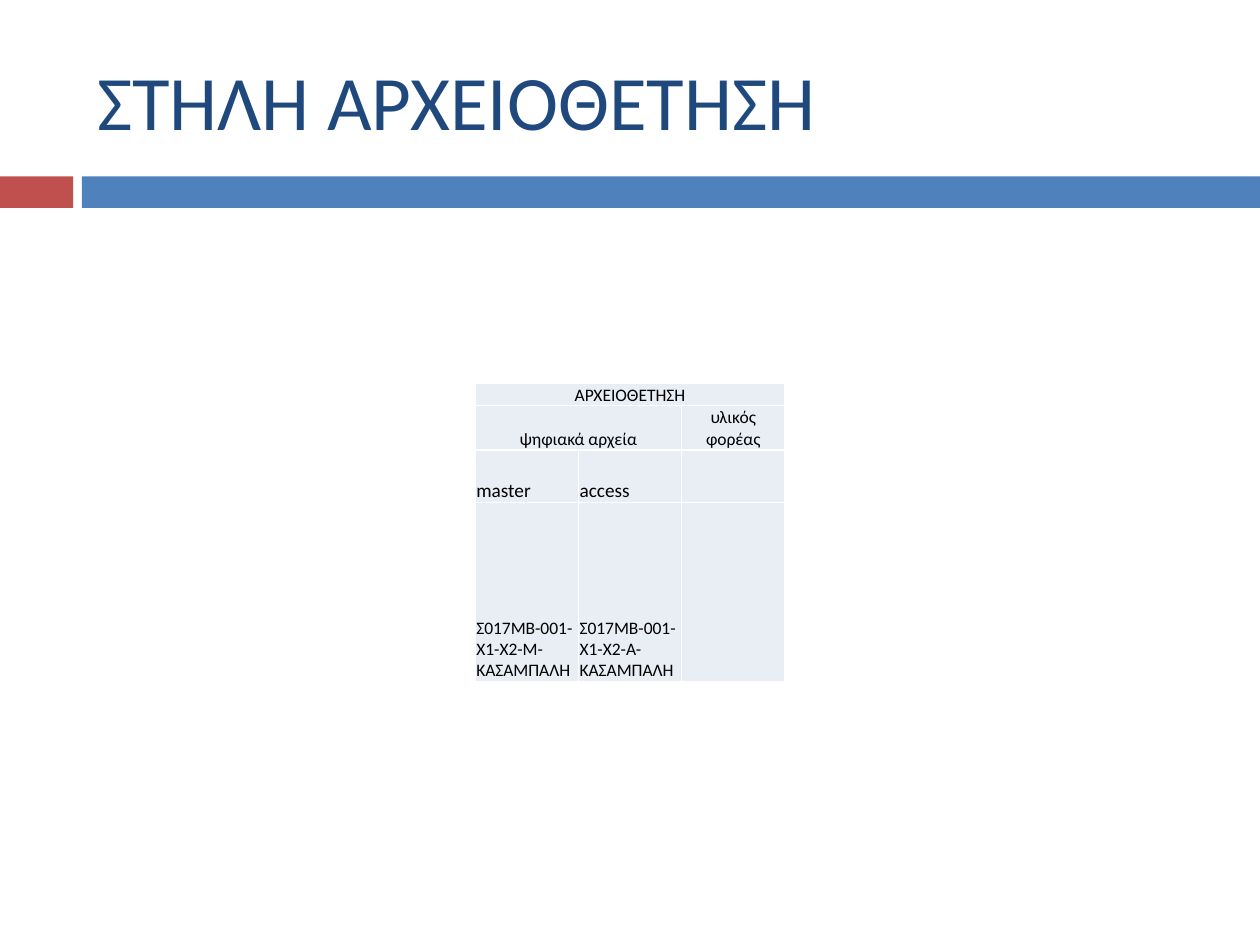
from dataclasses import dataclass

from lxml.etree import SubElement
from pptx import Presentation
from pptx.dml.color import RGBColor as Rgb
from pptx.enum.shapes import MSO_SHAPE as Shape
from pptx.enum.text import MSO_ANCHOR as Anchor, PP_ALIGN as Align
from pptx.oxml.ns import qn
from pptx.util import Inches, Pt


@dataclass(frozen=True)
class Theme:
    font: str = "Calibri"
    title_color: str = "1F497D"
    accent: str = "C0504D"
    band: str = "4F81BD"
    cell: str = "E9EDF4"
    border: str = "FFFFFF"
    text: str = "000000"
    title_size: int = 44
    label_size: int = 11
    cell_size: int = 10


THEME = Theme()
WIDTH, HEIGHT = 10, 7.5
BAND_TOP, BAND_HEIGHT = 1.4, 0.25
COLUMN_WIDTH = 0.82
ROW_HEIGHTS = [0.18, 0.35, 0.42, 1.42]
TABLE_TOP = 3.04
CONTENT = [
    ["ΑΡΧΕΙΟΘΕΤΗΣΗ", "", ""],
    ["ψηφιακά αρχεία", "", "υλικός φορέας"],
    ["master", "access", ""],
    ["Σ017ΜΒ-001-Χ1-Χ2-Μ-ΚΑΣΑΜΠΑΛΗ", "Σ017ΜΒ-001-Χ1-Χ2-Α-ΚΑΣΑΜΠΑΛΗ", ""],
]
HEADER_SPANS = [3, 2]
LABEL_ROW = 2


def style_text(paragraph, size, color, align):
    paragraph.alignment = align
    for run in paragraph.runs:
        run.font.name = THEME.font
        run.font.size = Pt(size)
        run.font.color.rgb = Rgb.from_string(color)


def add_title(slide, wording):
    title = slide.shapes.title
    title.left, title.top = Inches(0.67), Inches(0.25)
    title.width, title.height = Inches(8.92), Inches(1.08)
    frame = title.text_frame
    frame.text = wording
    frame.vertical_anchor = Anchor.MIDDLE
    style_text(frame.paragraphs[0], THEME.title_size, THEME.title_color, Align.LEFT)


def add_band(slide, left, right, color):
    band = slide.shapes.add_shape(
        Shape.RECTANGLE, Inches(left), Inches(BAND_TOP),
        Inches(right - left), Inches(BAND_HEIGHT))
    band.shadow.inherit = False
    band.fill.solid()
    band.fill.fore_color.rgb = Rgb.from_string(color)
    band.line.fill.background()


def add_borders(cell):
    properties = cell._tc.get_or_add_tcPr()
    for side in ("a:lnL", "a:lnR", "a:lnT", "a:lnB"):
        line = SubElement(properties, qn(side), w=str(Pt(1)))
        fill = SubElement(line, qn("a:solidFill"))
        SubElement(fill, qn("a:srgbClr"), val=THEME.border)


def fill_cell(cell, wording, size, align):
    add_borders(cell)
    cell.fill.solid()
    cell.fill.fore_color.rgb = Rgb.from_string(THEME.cell)
    cell.vertical_anchor = Anchor.BOTTOM
    cell.margin_left = cell.margin_right = cell.margin_top = Inches(0.01)
    cell.margin_bottom = 0
    if wording:
        cell.text_frame.text = wording
        style_text(cell.text_frame.paragraphs[0], size, THEME.text, align)


def add_filing_table(slide):
    columns = len(CONTENT[0])
    width = columns * COLUMN_WIDTH
    table = slide.shapes.add_table(
        len(CONTENT), columns, Inches((WIDTH - width) / 2), Inches(TABLE_TOP),
        Inches(width), Inches(sum(ROW_HEIGHTS))).table
    table.first_row = table.horz_banding = False
    for column in table.columns:
        column.width = Inches(COLUMN_WIDTH)
    for row, height in zip(table.rows, ROW_HEIGHTS):
        row.height = Inches(height)
    for r, wordings in enumerate(CONTENT):
        size = THEME.label_size if r == LABEL_ROW else THEME.cell_size
        align = Align.CENTER if r < len(HEADER_SPANS) else Align.LEFT
        for c, wording in enumerate(wordings):
            fill_cell(table.cell(r, c), wording, size, align)
    for r, span in enumerate(HEADER_SPANS):
        table.cell(r, 0).merge(table.cell(r, span - 1))


def main():
    deck = Presentation()
    deck.slide_width, deck.slide_height = Inches(WIDTH), Inches(HEIGHT)
    slide = deck.slides.add_slide(deck.slide_layouts[5])
    add_band(slide, 0, 0.58, THEME.accent)
    add_band(slide, 0.65, WIDTH, THEME.band)
    add_title(slide, "ΣΤΗΛΗ ΑΡΧΕΙΟΘΕΤΗΣΗ")
    add_filing_table(slide)
    deck.save("out.pptx")


if __name__ == "__main__":
    main()
